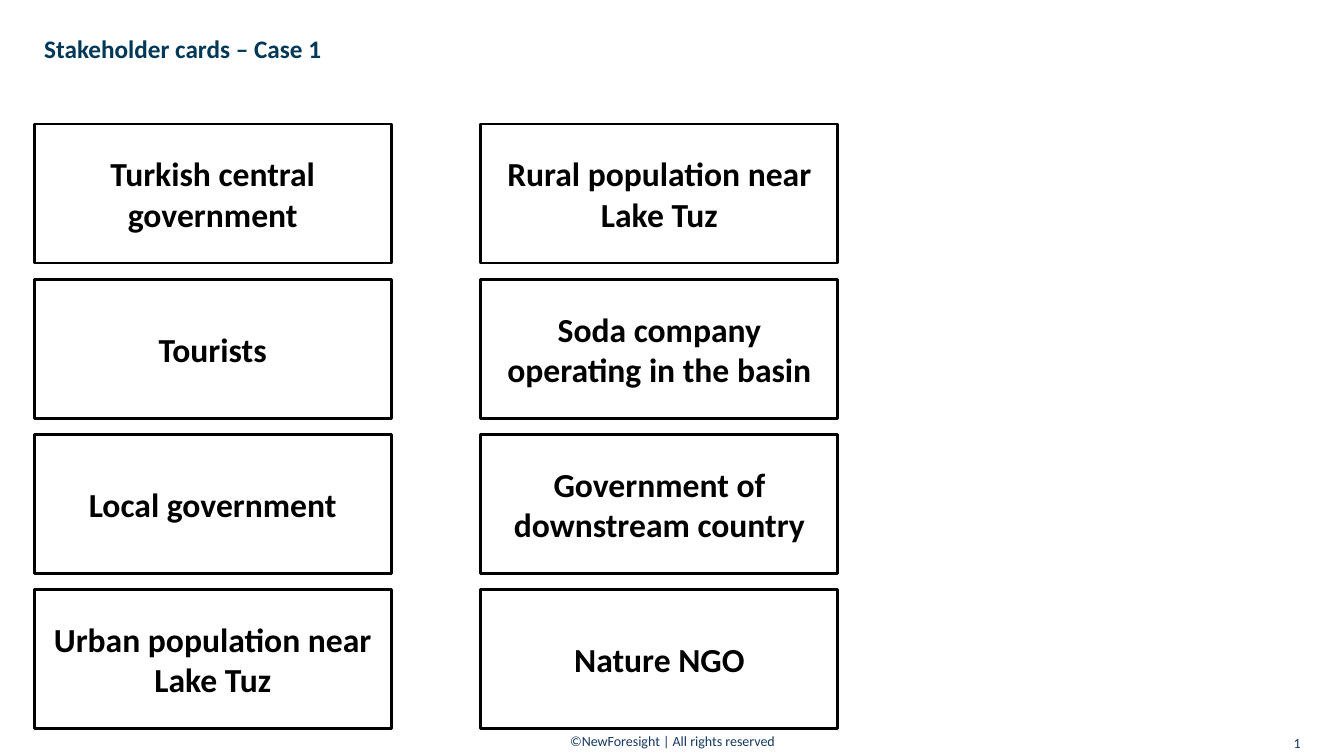
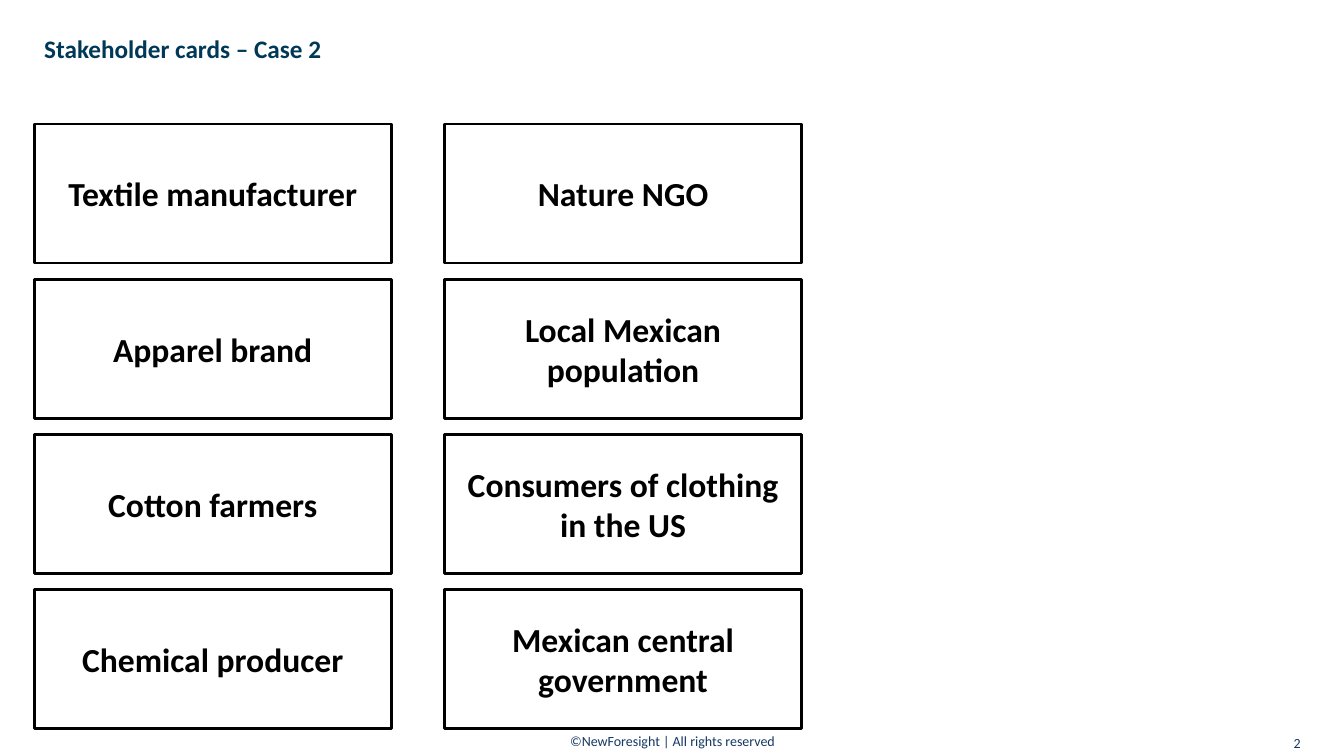
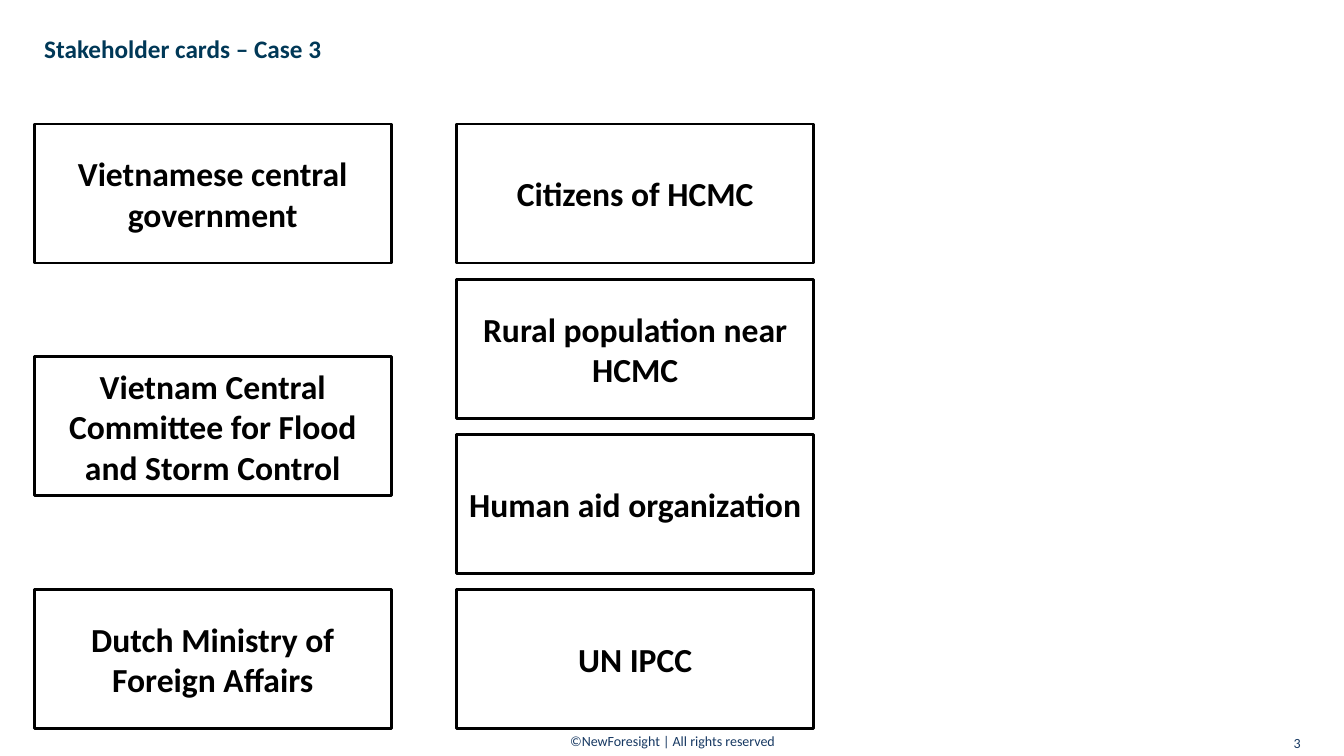
from pptx import Presentation
from pptx import util as u
from pptx.dml.color import RGBColor
from pptx.enum import shapes, text
from pptx.oxml import parse_xml
from pptx.oxml.ns import nsdecls

COLORS = {"title": "003857", "footer": "163862", "ink": "000000", "card": "FFFFFF"}
FONT = "Calibri"
LEFT, TOP = 0.34, 1.23
CARD_W, CARD_H = 3.54, 1.38
ROW_PITCH = 1.54

CASES = [
    (4.43, [
        [(0, "Turkish central government"), (1, "Tourists"),
         (2, "Local government"), (3, "Urban population near Lake Tuz")],
        [(0, "Rural population near Lake Tuz"), (1, "Soda company operating in the basin"),
         (2, "Government of downstream country"), (3, "Nature NGO")],
    ]),
    (4.07, [
        [(0, "Textile manufacturer"), (1, "Apparel brand"),
         (2, "Cotton farmers"), (3, "Chemical producer")],
        [(0, "Nature NGO"), (1, "Local Mexican population"),
         (2, "Consumers of clothing in the US"), (3, "Mexican central government")],
    ]),
    (4.19, [
        [(0, "Vietnamese central government"),
         (1.5, "Vietnam Central Committee for Flood and Storm Control"),
         (3, "Dutch Ministry of Foreign Affairs")],
        [(0, "Citizens of HCMC"), (1, "Rural population near HCMC"),
         (2, "Human aid organization"), (3, "UN IPCC")],
    ]),
]


def write(sp, words, size, color, align, anchor, bold=False):
    tf = sp.text_frame
    tf.word_wrap = True
    tf.vertical_anchor = anchor
    p = tf.paragraphs[0]
    p.alignment = align
    r = p.add_run()
    r.text = words
    r.font.name = FONT
    r.font.size = u.Pt(size)
    r.font.bold = bold
    r.font.color.rgb = RGBColor.from_string(COLORS[color])
    return p, r


def add_box(s, left, top, width, height):
    return s.shapes.add_textbox(u.Inches(left), u.Inches(top), u.Inches(width), u.Inches(height))


prs = Presentation()
prs.slide_width, prs.slide_height = u.Inches(13.33), u.Inches(7.5)
blank = prs.slide_layouts[6]
ALIGN, ANCHOR = text.PP_ALIGN, text.MSO_ANCHOR

for number, (column_pitch, columns) in enumerate(CASES, start=1):
    s = prs.slides.add_slide(blank)

    write(add_box(s, 4.36, 7.22, 4.62, 0.27), "©NewForesight | All rights reserved",
          10, "footer", ALIGN.CENTER, ANCHOR.TOP)
    p, r = write(add_box(s, 9.8, 7.24, 3.2, 0.25), str(number),
                 10, "footer", ALIGN.RIGHT, ANCHOR.MIDDLE)
    field = parse_xml(f'<a:fld {nsdecls("a")} type="slidenum" '
                      'id="{B6F15528-21DE-4FAA-801E-634DDDAF4B2B}"/>')
    p._p.replace(r._r, field)
    field.extend(list(r._r))
    write(add_box(s, LEFT, 0.28, 12.68, 0.39), f"Stakeholder cards – Case {number}",
          18, "title", ALIGN.LEFT, ANCHOR.TOP, bold=True)

    for column, cards in enumerate(columns):
        for row, stakeholder in cards:
            sp = s.shapes.add_shape(
                shapes.MSO_SHAPE.RECTANGLE,
                u.Inches(LEFT + column * column_pitch), u.Inches(TOP + row * ROW_PITCH),
                u.Inches(CARD_W), u.Inches(CARD_H))
            sp.shadow.inherit = False
            sp.fill.solid()
            sp.fill.fore_color.rgb = RGBColor.from_string(COLORS["card"])
            sp.line.color.rgb = RGBColor.from_string(COLORS["ink"])
            sp.line.width = u.Pt(2)
            write(sp, stakeholder, 24, "ink", ALIGN.CENTER, ANCHOR.MIDDLE, bold=True)

prs.save("out.pptx")
